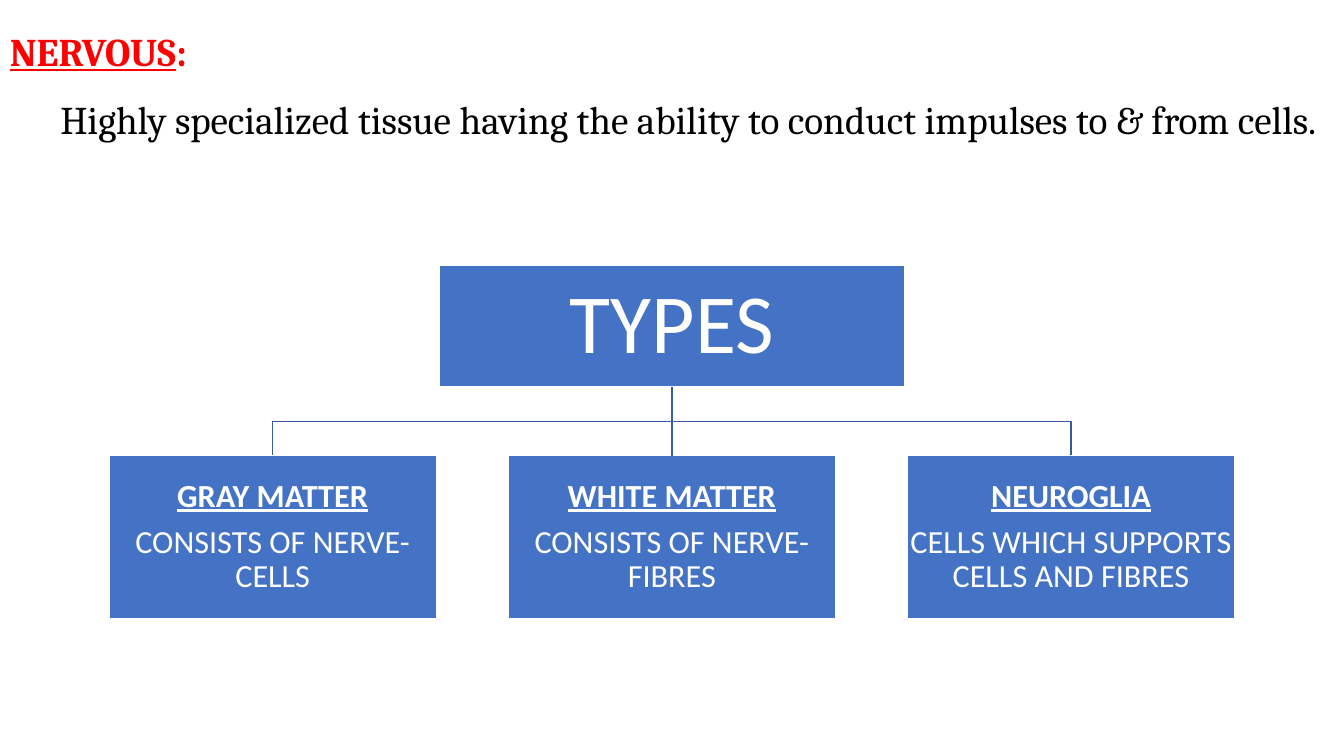
import pptx
import pptx.dml.color
import pptx.enum.shapes
import pptx.enum.text
import pptx.util
from lxml import etree
from pptx.util import Cm, Pt

HEADING = ("NERVOUS", ":")
DEFINITION = "Highly specialized tissue having the ability to conduct impulses to & from cells."
ROOT = "TYPES"
TYPES = [
    ("GRAY MATTER", "CONSISTS OF NERVE-CELLS"),
    ("WHITE MATTER", "CONSISTS OF NERVE-FIBRES"),
    ("NEUROGLIA", "CELLS WHICH SUPPORTS CELLS AND FIBRES"),
]

THEME = {
    "box": "4472C4", "branch": "365B9D", "light": "FFFFFF",
    "heading": "FF0000", "body": "000000",
    "intro_font": "Cambria", "chart_font": "Calibri",
    "intro_size": 28, "root_size": 60, "type_size": 23, "line": 1,
}

SLIDE_W, SLIDE_H = Cm(33.87), Cm(19.05)
CENTRE = SLIDE_W // 2
ROOT_TOP, ROOT_W, ROOT_H = Cm(6.68), Cm(11.73), Cm(3.07)
TYPE_TOP, TYPE_W, TYPE_H = Cm(11.48), Cm(8.26), Cm(4.11)
TYPE_PITCH = Cm(10.06)
ROOT_BOTTOM = ROOT_TOP + ROOT_H


def colour(name):
    return pptx.dml.color.RGBColor.from_string(THEME[name])


def style(run, font, size, ink, strong=False, underline=False):
    run.font.name = THEME[font]
    run.font.size = Pt(THEME[size])
    run.font.color.rgb = colour(ink)
    run.font.bold = strong
    run.font.underline = underline


def style_line(line, ink):
    line.color.rgb = colour(ink)
    line.width = Pt(THEME["line"])


def add_intro(slide):
    intro = slide.shapes.add_textbox(0, Cm(0.38), SLIDE_W, Cm(4.65))
    frame = intro.text_frame
    frame.word_wrap = True
    heading, definition = frame.paragraphs[0], frame.add_paragraph()
    for part in HEADING:
        run = heading.add_run()
        run.text = part
        style(run, "intro_font", "intro_size", "heading", True, part == HEADING[0])
    definition.text = DEFINITION
    definition._p.get_or_add_pPr().set("marL", str(Cm(1.27)))
    style(definition.runs[0], "intro_font", "intro_size", "body")
    for paragraph in frame.paragraphs:
        paragraph.line_spacing = 1.15
        paragraph.space_after = Pt(10)


def add_box(slide, centre, top, width, height, lines, size, inset):
    """Add a filled box; with several lines, the first is its underlined title."""
    box = slide.shapes.add_shape(
        pptx.enum.shapes.MSO_SHAPE.RECTANGLE, centre - width // 2, top, width, height)
    box.shadow.inherit = False
    box.fill.solid()
    box.fill.fore_color.rgb = colour("box")
    style_line(box.line, "light")
    frame = box.text_frame
    frame.word_wrap = True
    frame.vertical_anchor = pptx.enum.text.MSO_ANCHOR.MIDDLE
    frame.margin_left = frame.margin_right = inset
    frame.margin_top = frame.margin_bottom = inset
    frame.text = "\n".join(lines)
    for i, paragraph in enumerate(frame.paragraphs):
        titled = i == 0 and len(lines) > 1
        paragraph.alignment = pptx.enum.text.PP_ALIGN.CENTER
        paragraph.line_spacing = 0.9
        if titled:
            paragraph.space_after = Pt(8)
        style(paragraph.runs[0], "chart_font", size, "light", titled, titled)
    return box


def add_elbow(slide, centre):
    """Draw the branch from the root down, across and down to a side box."""
    middle = (ROOT_BOTTOM + TYPE_TOP) // 2
    builder = slide.shapes.build_freeform(CENTRE, ROOT_BOTTOM)
    builder.add_line_segments(
        [(CENTRE, middle), (centre, middle), (centre, TYPE_TOP)], close=False)
    elbow = builder.convert_to_shape()
    elbow.shadow.inherit = False
    elbow.fill.background()
    style_line(elbow.line, "branch")


def add_stem(slide, root, child):
    stem = slide.shapes.add_connector(
        pptx.enum.shapes.MSO_CONNECTOR.STRAIGHT, CENTRE, ROOT_BOTTOM, CENTRE, TYPE_TOP)
    stem.begin_connect(root, 2)
    stem.end_connect(child, 0)
    style_line(stem.line, "branch")
    etree.SubElement(stem._element.spPr, pptx.oxml.ns.qn("a:effectLst"))


def main():
    deck = pptx.Presentation()
    deck.slide_width, deck.slide_height = SLIDE_W, SLIDE_H
    slide = deck.slides.add_slide(deck.slide_layouts[6])
    add_intro(slide)

    middle = len(TYPES) // 2
    centres = [CENTRE + (i - middle) * TYPE_PITCH for i in range(len(TYPES))]
    for centre in centres:
        if centre != CENTRE:
            add_elbow(slide, centre)

    root = add_box(slide, CENTRE, ROOT_TOP, ROOT_W, ROOT_H, [ROOT], "root_size", Cm(0.1))
    children = [
        add_box(slide, centre, TYPE_TOP, TYPE_W, TYPE_H, lines, "type_size", Cm(0.04))
        for centre, lines in zip(centres, TYPES)
    ]
    add_stem(slide, root, children[middle])
    deck.save("out.pptx")


if __name__ == "__main__":
    main()
